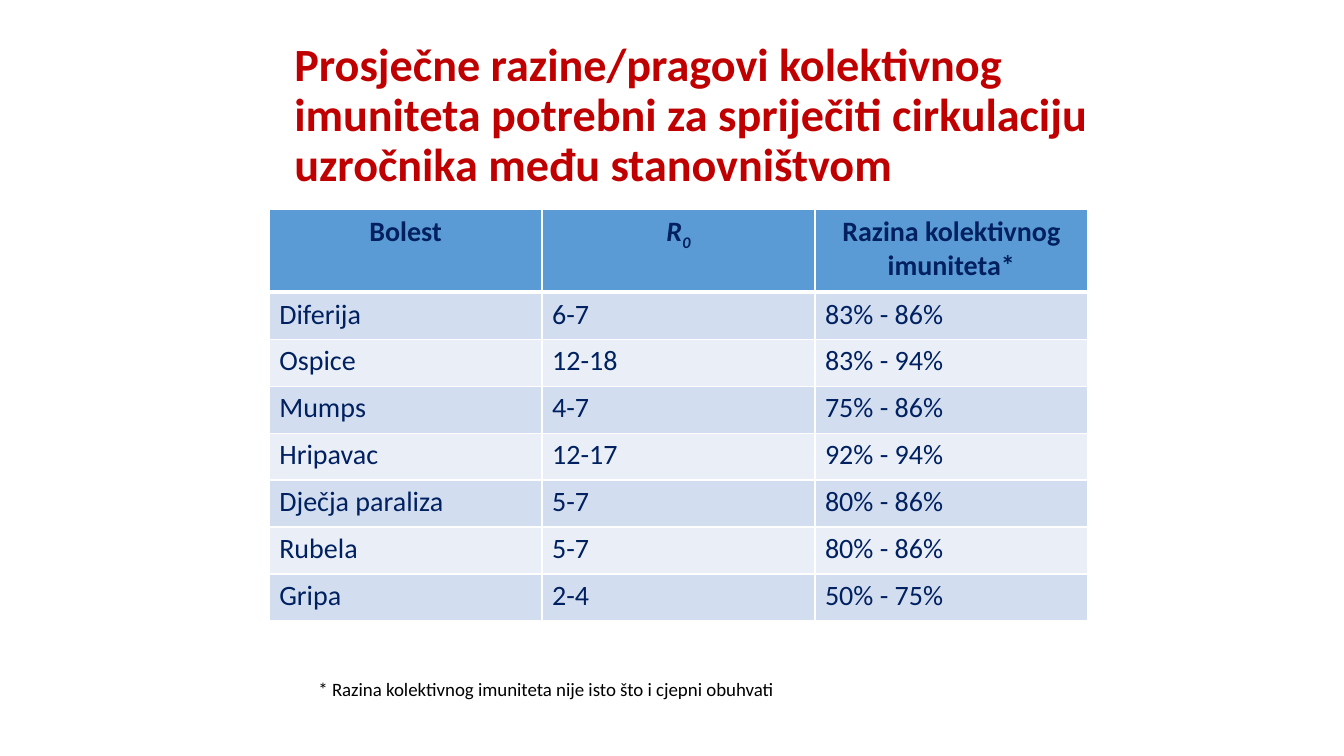
from lxml.etree import SubElement
from pptx import Presentation
from pptx.dml.color import RGBColor
from pptx.enum.text import MSO_ANCHOR, MSO_AUTO_SIZE, PP_ALIGN
from pptx.oxml.ns import qn
from pptx.util import Inches, Pt

NAVY, RED, BLACK, WHITE = "002060", "C00000", "000000", "FFFFFF"
HEADER_FILL, BAND_FILLS = "5B9BD5", ("D2DEEF", "EAEFF7")
HEADER_HEIGHT, ROW_HEIGHT = 0.82, 0.466

# Each heading is a list of (text, italic, baseline) runs.
HEADINGS = [
    [("Bolest", False, 0)],
    [("R", True, 0), ("0", True, -25000)],
    [("Razina kolektivnog imuniteta*", False, 0)],
]
DISEASES = [
    ("Diferija", "6-7", "83% - 86%"),
    ("Ospice", "12-18", "83% - 94%"),
    ("Mumps", "4-7", "75% - 86%"),
    ("Hripavac", "12-17", "92% - 94%"),
    ("Dječja paraliza", "5-7", "80% - 86%"),
    ("Rubela", "5-7", "80% - 86%"),
    ("Gripa", "2-4", "50% - 75%"),
]


def color(hex_value):
    return RGBColor.from_string(hex_value)


def add_run(paragraph, text, size, hex_value, bold=False, italic=False, baseline=0):
    run = paragraph.add_run()
    run.text = text
    font = run.font
    font.name, font.size = "Calibri", Pt(size)
    font.bold, font.italic = bold, italic
    font.color.rgb = color(hex_value)
    if baseline:
        run._r.get_or_add_rPr().set("baseline", str(baseline))


def add_text(slide, box, text, size, hex_value, bold=False):
    frame = slide.shapes.add_textbox(*map(Inches, box)).text_frame
    frame.word_wrap = True
    add_run(frame.paragraphs[0], text, size, hex_value, bold)
    return frame


def add_title(slide, box):
    frame = add_text(
        slide, box,
        "Prosječne razine/pragovi kolektivnog imuniteta potrebni za "
        "spriječiti cirkulaciju uzročnika među stanovništvom",
        33, RED, bold=True)
    frame.vertical_anchor = MSO_ANCHOR.MIDDLE
    frame.paragraphs[0].line_spacing = 0.9


def add_footnote(slide, box):
    frame = add_text(
        slide, box,
        "* Razina kolektivnog imuniteta nije isto što i cjepni obuhvati",
        13.5, BLACK)
    frame.auto_size = MSO_AUTO_SIZE.SHAPE_TO_FIT_TEXT


def style_cell(cell, fill, top=1, bottom=1):
    """Set white borders, with widths in points, and then the fill."""
    properties = cell._tc.get_or_add_tcPr()
    for side, width in (("L", 1), ("R", 1), ("T", top), ("B", bottom)):
        line = SubElement(properties, qn(f"a:ln{side}"), w=str(Pt(width)))
        solid = SubElement(line, qn("a:solidFill"))
        SubElement(solid, qn("a:srgbClr"), val=WHITE)
    cell.fill.solid()
    cell.fill.fore_color.rgb = color(fill)
    cell.margin_left = cell.margin_right = Inches(0.1)
    cell.margin_top = cell.margin_bottom = Inches(0.05)


def add_immunity_table(slide, box):
    table = slide.shapes.add_table(
        len(DISEASES) + 1, len(HEADINGS), *map(Inches, box)).table
    table.rows[0].height = Inches(HEADER_HEIGHT)
    for column, runs in enumerate(HEADINGS):
        cell = table.cell(0, column)
        style_cell(cell, HEADER_FILL, bottom=3)
        heading = cell.text_frame.paragraphs[0]
        heading.alignment = PP_ALIGN.CENTER
        for text, italic, baseline in runs:
            add_run(heading, text, 20, NAVY, True, italic, baseline)
    for row, disease in enumerate(DISEASES, start=1):
        table.rows[row].height = Inches(ROW_HEIGHT)
        for column, text in enumerate(disease):
            cell = table.cell(row, column)
            style_cell(cell, BAND_FILLS[(row - 1) % 2], top=3 if row == 1 else 1)
            add_run(cell.text_frame.paragraphs[0], text, 20, NAVY)


def main():
    presentation = Presentation()
    presentation.slide_width = Inches(13.33)
    presentation.slide_height = Inches(7.5)
    slide = presentation.slides.add_slide(presentation.slide_layouts[6])
    add_title(slide, (2.82, 0.5, 8.21, 1.31))
    add_immunity_table(slide, (2.67, 2.08, 8.12, 4.08))
    add_footnote(slide, (3.06, 6.67, 7.73, 0.33))
    presentation.save("out.pptx")


if __name__ == "__main__":
    main()
